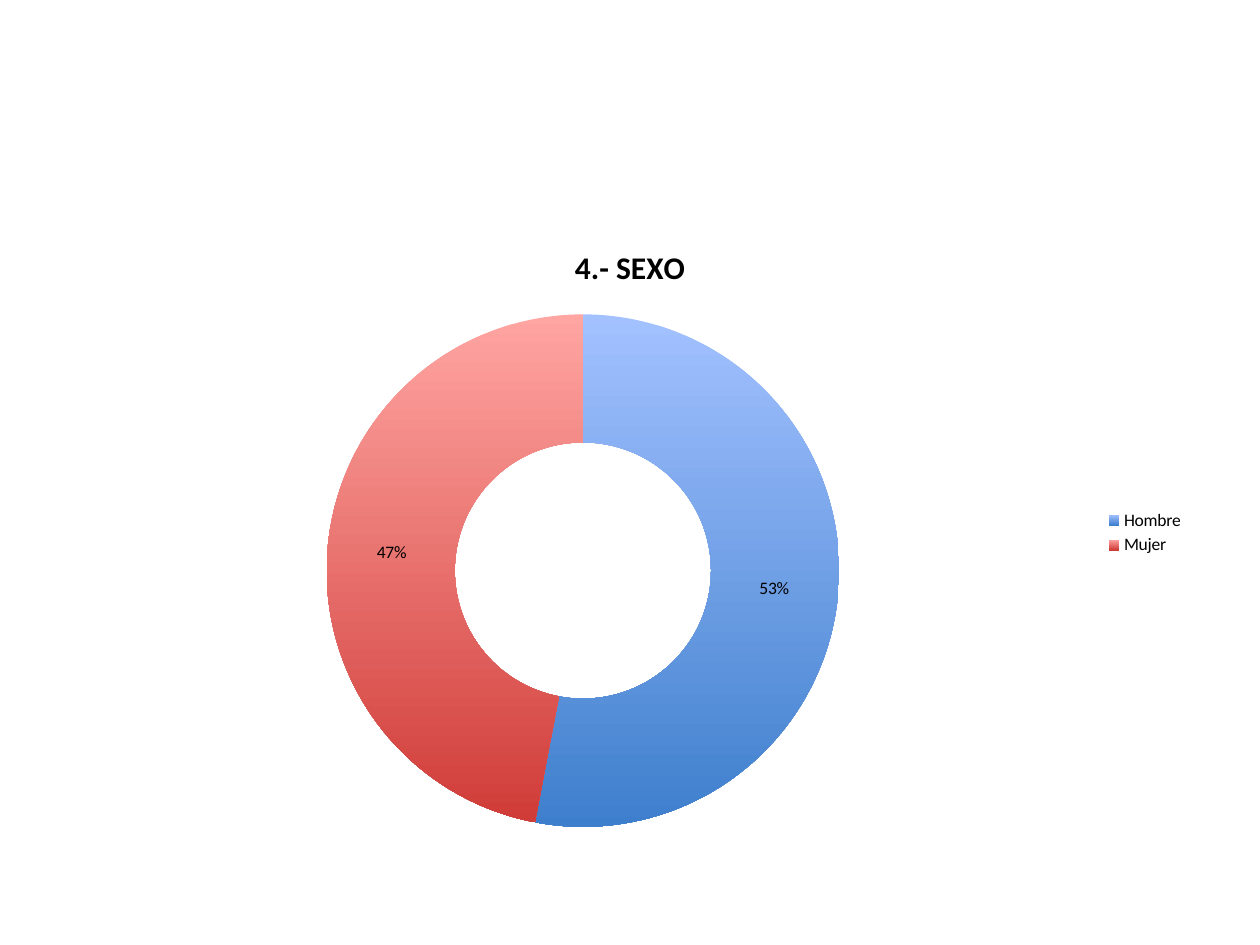
from pptx import Presentation
from pptx.chart.data import CategoryChartData
from pptx.dml.color import RGBColor
from pptx.enum.chart import XL_CHART_TYPE, XL_LEGEND_POSITION
from pptx.util import Cm, Pt

COLOURS = {
    "text": "000000",
    "blue_light": "A3C1FF",
    "blue_dark": "3E7FCD",
    "red_light": "FFA5A2",
    "red_dark": "D03C38",
}


class SlideBuilder:
    """Holds the text style and the current slide."""

    font_name = "Calibri"
    text_size = Pt(10)
    title_size = Pt(18)

    def __init__(self, slide):
        self.slide = slide

    def style_font(self, font, size, bold=False):
        font.name = self.font_name
        font.size = size
        font.bold = bold
        font.color.rgb = RGBColor.from_string(COLOURS["text"])

    def fill_gradient(self, fill, hue):
        fill.gradient()
        fill.gradient_angle = 270  # from top to bottom
        for stop, shade in zip(fill.gradient_stops, ("light", "dark")):
            stop.color.rgb = RGBColor.from_string(COLOURS[f"{hue}_{shade}"])

    def add_doughnut(self, title, shares, hues, left, top, width, height):
        data = CategoryChartData()
        data.categories = list(shares)
        data.add_series(title, list(shares.values()))
        chart = self.slide.shapes.add_chart(
            XL_CHART_TYPE.DOUGHNUT, left, top, width, height, data
        ).chart
        self.style_font(chart.font, self.text_size)

        # Title
        chart.has_title = True
        run = chart.chart_title.text_frame.paragraphs[0].add_run()
        run.text = title
        self.style_font(run.font, self.title_size, bold=True)
        chart.chart_title.include_in_layout = False

        # Legend
        chart.has_legend = True
        chart.legend.position = XL_LEGEND_POSITION.RIGHT
        chart.legend.include_in_layout = False

        # Slices and percentage labels
        plot = chart.plots[0]
        plot.vary_by_categories = True
        for index, hue in enumerate(hues):
            point_format = plot.series[0].points[index].format
            self.fill_gradient(point_format.fill, hue)
            point_format.line.fill.background()
        plot.has_data_labels = True
        labels = plot.data_labels
        labels.show_percentage = True
        labels.show_value = False
        labels.number_format = "0%"
        labels.number_format_is_linked = False
        self.style_font(labels.font, self.text_size)


def main():
    presentation = Presentation()
    presentation.slide_width = Cm(25.4)
    presentation.slide_height = Cm(19.05)
    slide = presentation.slides.add_slide(presentation.slide_layouts[6])

    # Share of respondents by sex
    SlideBuilder(slide).add_doughnut(
        "4.- SEXO",
        {"Hombre": 53, "Mujer": 47},
        ("blue", "red"),
        Cm(1.27), Cm(4.45), Cm(22.86), Cm(12.57),
    )
    presentation.save("out.pptx")


if __name__ == "__main__":
    main()
